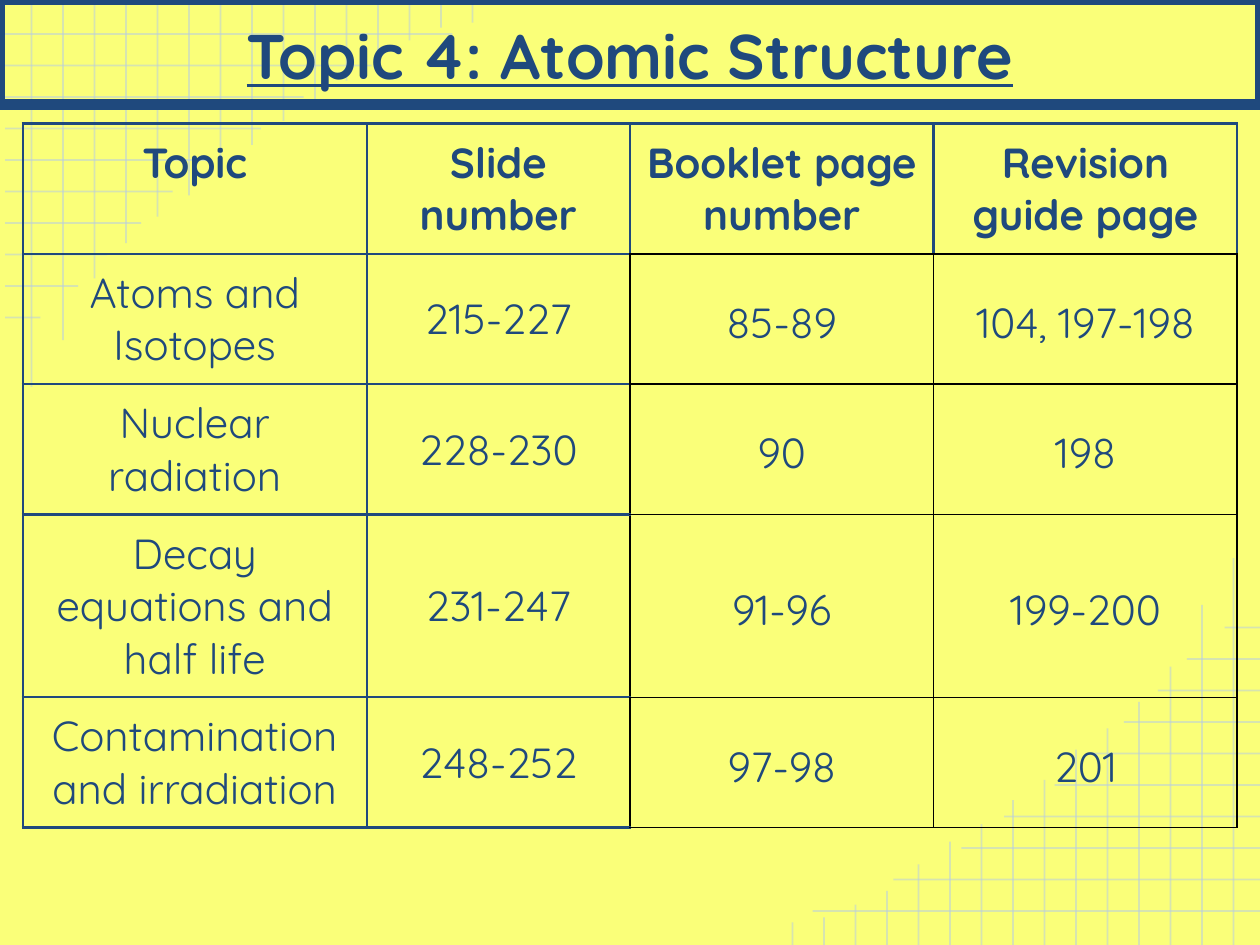
from dataclasses import dataclass

from lxml.etree import SubElement
from pptx import Presentation
from pptx.dml.color import RGBColor
from pptx.enum.shapes import MSO_CONNECTOR, MSO_SHAPE
from pptx.enum.text import MSO_ANCHOR, PP_ALIGN
from pptx.oxml.ns import qn
from pptx.slide import Slide
from pptx.table import _Cell
from pptx.text.text import _Paragraph
from pptx.util import Inches, Pt


@dataclass(frozen=True)
class Theme:
    font: str = "Quicksand"
    paper: str = "FAFF79"
    navy: str = "1F497D"
    black: str = "000000"
    grid: str = "B7CCE4"
    grid_opacity: int = 53
    title_size: int = 36
    table_size: int = 24


@dataclass(frozen=True)
class GridLine:
    x1: float
    y1: float
    x2: float
    y2: float

    def turned(self) -> "GridLine":
        """The same line in the opposite corner, after a half turn."""
        return GridLine(10.04 - self.x1, 7.5 - self.y1,
                        10.04 - self.x2, 7.5 - self.y2)


@dataclass(frozen=True)
class Border:
    color: str
    width: float


@dataclass(frozen=True)
class TopicRow:
    topic: str
    slides: str
    booklet: str
    guide: str

    def texts(self) -> tuple[str, ...]:
        return self.topic, self.slides, self.booklet, self.guide


THEME = Theme()
NAVY_BORDER = Border(THEME.navy, 1.5)
BLACK_BORDER = Border(THEME.black, 1)

GRID_STEP = 0.25
ROW_ENDS = (3.59, 2.95, 2.41, 2.07, 1.67, 1.37, 1.12, 0.85, 0.62, 0.32)
COLUMN_ENDS = (3.07, 2.7, 2.21, 1.93, 1.72, 1.55, 1.31, 1.15,
               0.96, 0.82, 0.64, 0.43, 0.32, 0.22, 0.18)

COLUMN_WIDTHS = (2.73, 2.09, 2.41, 2.41)
HEADER_HEIGHT, ROW_HEIGHT = 0.69, 0.67
ROWS = (
    TopicRow("Topic", "Slide number", "Booklet page number", "Revision guide page"),
    TopicRow("Atoms and Isotopes", "215-227", "85-89", "104, 197-198"),
    TopicRow("Nuclear radiation", "228-230", "90", "198"),
    TopicRow("Decay equations and half life", "231-247", "91-96", "199-200"),
    TopicRow("Contamination and irradiation", "248-252", "97-98", "201"),
)


def style_paragraph(paragraph: _Paragraph, size: int, bold: bool) -> None:
    paragraph.alignment = PP_ALIGN.CENTER
    font = paragraph.font
    font.name = THEME.font
    font.size = Pt(size)
    font.bold = bold
    font.color.rgb = RGBColor.from_string(THEME.navy)


def draw_grid_line(slide: Slide, line: GridLine) -> None:
    connector = slide.shapes.add_connector(
        MSO_CONNECTOR.STRAIGHT, Inches(line.x1), Inches(line.y1),
        Inches(line.x2), Inches(line.y2))
    connector.line.width = Pt(1)
    connector.line.color.rgb = RGBColor.from_string(THEME.grid)
    properties = connector._element.spPr
    color = next(properties.iter(qn("a:srgbClr")))
    SubElement(color, qn("a:alpha"), val=str(THEME.grid_opacity * 1000))
    SubElement(properties, qn("a:effectLst"))


def draw_grids(slide: Slide) -> None:
    corner = [GridLine(0.04, 0.02 + GRID_STEP * i, end, 0.02 + GRID_STEP * i)
              for i, end in enumerate(ROW_ENDS, 1)]
    corner += [GridLine(GRID_STEP * i, end, GRID_STEP * i, 0)
               for i, end in enumerate(COLUMN_ENDS, 1)]
    for line in corner + [line.turned() for line in corner]:
        draw_grid_line(slide, line)


def draw_title(slide: Slide, text: str) -> None:
    banner = slide.shapes.add_shape(
        MSO_SHAPE.RECTANGLE, 0, 0, Inches(10), Inches(0.83))
    banner.shadow.inherit = False
    banner.fill.background()
    banner.line.color.rgb = RGBColor.from_string(THEME.navy)
    banner.line.width = Pt(6)
    frame = banner.text_frame
    frame.word_wrap = True
    frame.vertical_anchor = MSO_ANCHOR.BOTTOM
    frame.margin_left = frame.margin_right = Inches(0.1)
    frame.margin_top = frame.margin_bottom = Inches(0.1)
    frame.text = text
    style_paragraph(frame.paragraphs[0], THEME.title_size, True)
    frame.paragraphs[0].font.underline = True


def set_borders(cell: _Cell, borders: dict[str, Border]) -> None:
    properties = cell._tc.get_or_add_tcPr()
    for side in ("L", "R", "T", "B"):
        border = borders[side]
        line = SubElement(properties, qn(f"a:ln{side}"), w=str(Pt(border.width)))
        fill = SubElement(line, qn("a:solidFill"))
        SubElement(fill, qn("a:srgbClr"), val=border.color)


def cell_borders(row: int, column: int) -> dict[str, Border]:
    is_header, is_page = row == 0, column >= 2
    borders = dict.fromkeys(
        "LRTB", BLACK_BORDER if is_page and not is_header else NAVY_BORDER)
    if is_header and is_page:
        borders["B"] = BLACK_BORDER
    if not is_header and column == 1:
        borders["R"] = BLACK_BORDER
    return borders


def fill_cell(cell: _Cell, text: str, row: int, column: int) -> None:
    is_header = row == 0
    is_page = column >= 2 and not is_header
    cell.text = text
    cell.margin_left = cell.margin_right = Inches(0.07 if is_page else 0.1)
    cell.margin_top = cell.margin_bottom = Inches(0.1)
    if column > 0 and not is_header:
        cell.vertical_anchor = MSO_ANCHOR.MIDDLE
    paragraph = cell.text_frame.paragraphs[0]
    style_paragraph(paragraph, THEME.table_size, is_header)
    if is_page:
        paragraph.line_spacing = 1.15
    set_borders(cell, cell_borders(row, column))
    cell.fill.background()


def draw_topic_table(slide: Slide) -> None:
    table = slide.shapes.add_table(
        len(ROWS), len(COLUMN_WIDTHS), Inches(0.18), Inches(0.98),
        Inches(sum(COLUMN_WIDTHS)), Inches(5.4)).table
    table.first_row = table.horz_banding = False
    for column, width in zip(table.columns, COLUMN_WIDTHS):
        column.width = Inches(width)
    for r, topic_row in enumerate(ROWS):
        table.rows[r].height = Inches(ROW_HEIGHT if r else HEADER_HEIGHT)
        for c, text in enumerate(topic_row.texts()):
            fill_cell(table.cell(r, c), text, r, c)


def main() -> None:
    presentation = Presentation()
    presentation.slide_width, presentation.slide_height = Inches(10), Inches(7.5)
    slide = presentation.slides.add_slide(presentation.slide_layouts[6])
    background = slide.background.fill
    background.solid()
    background.fore_color.rgb = RGBColor.from_string(THEME.paper)

    # Squared-paper corners
    draw_grids(slide)

    # Heading and page references
    draw_title(slide, "Topic 4: Atomic Structure")
    draw_topic_table(slide)

    presentation.save("out.pptx")


if __name__ == "__main__":
    main()
